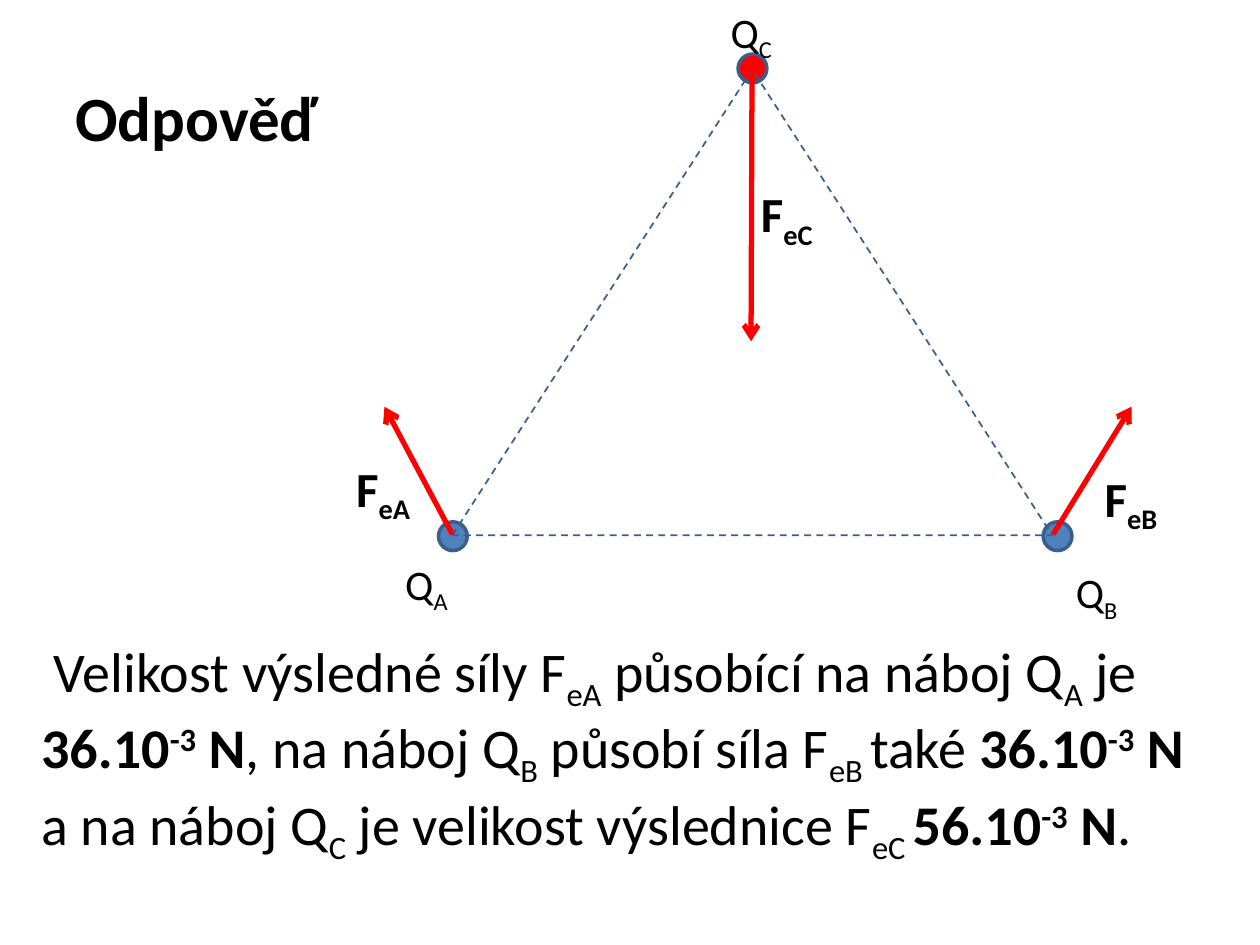
"""Build a slide with the resultant electric forces on three charges in a triangle."""
from typing import NamedTuple

from lxml import etree
from pptx import Presentation
from pptx.dml.color import RGBColor
from pptx.enum import dml, shapes, text
from pptx.oxml import ns
from pptx.util import Cm, Pt

BLACK = RGBColor(0x00, 0x00, 0x00)
RED = RGBColor(0xFF, 0x00, 0x00)
BLUE = RGBColor(0x4F, 0x81, 0xBD)
OUTLINE = RGBColor(0x3A, 0x5F, 0x8C)
FONT = "Calibri"
SUB, SUPER = -25, 30
CHARGE_SIZE = 0.58
LABEL_HEIGHT = 1.88


class Run(NamedTuple):
    words: str
    baseline: int = 0
    bold: bool = False


class Charge(NamedTuple):
    x: float
    y: float
    fill: RGBColor


class Force(NamedTuple):
    x: float
    y: float
    tip_x: float
    tip_y: float


class Label(NamedTuple):
    symbol: str
    index: str
    left: float
    top: float
    width: float
    size: int = 24
    bold: bool = False


CHARGES = [
    Charge(9.13, 10.81, BLUE),
    Charge(21.32, 10.81, BLUE),
    Charge(15.17, 1.38, RED),
]
FORCES = [
    Force(15.16, 1.4, 15.14, 6.88),
    Force(9.12, 10.77, 7.75, 8.2),
    Force(21.23, 10.77, 22.81, 8.2),
]
LABELS = [
    Label("Q", "A", 7.92, 11.13, 1.6),
    Label("Q", "B", 21.44, 11.3, 1.6),
    Label("Q", "C", 14.48, 0, 1.6),
    Label("F", "eC", 15.09, 3.58, 1.78, 28, True),
    Label("F", "eB", 22.02, 9.32, 2.08, 28, True),
    Label("F", "eA", 6.93, 9.12, 1.78, 28, True),
]


def newtons(mantissa: str) -> list[Run]:
    return [Run(f"{mantissa}.10", bold=True), Run("-3", SUPER, True), Run(" N", bold=True)]


ANSWER = [
    Run(" Velikost výsledné síly F"), Run("eA", SUB),
    Run(" působící na náboj Q"), Run("A", SUB), Run(" je "),
    *newtons("36"),
    Run(", na náboj Q"), Run("B", SUB),
    Run(" působí síla F"), Run("eB ", SUB), Run("také "),
    *newtons("36"),
    Run(" a na náboj Q"), Run("C", SUB),
    Run(" je velikost výslednice F"), Run("eC ", SUB),
    *newtons("56"), Run("."),
]


def add_text(slide, runs: list[Run], left: float, top: float, width: float, height: float,
             *, size: int, anchor=text.MSO_ANCHOR.TOP) -> None:
    frame = slide.shapes.add_textbox(Cm(left), Cm(top), Cm(width), Cm(height)).text_frame
    frame.word_wrap = True
    frame.vertical_anchor = anchor
    paragraph = frame.paragraphs[0]
    for part in runs:
        run = paragraph.add_run()
        run.text = part.words
        run.font.name = FONT
        run.font.size = Pt(size)
        run.font.bold = part.bold
        run.font.color.rgb = BLACK
        if part.baseline:
            run._r.get_or_add_rPr().set("baseline", str(part.baseline * 1000))


def add_charge(slide, charge: Charge) -> None:
    half = CHARGE_SIZE / 2
    dot = slide.shapes.add_shape(shapes.MSO_SHAPE.OVAL, Cm(charge.x - half), Cm(charge.y - half),
                                 Cm(CHARGE_SIZE), Cm(CHARGE_SIZE))
    dot.shadow.inherit = False
    dot.fill.solid()
    dot.fill.fore_color.rgb = charge.fill
    dot.line.color.rgb = OUTLINE
    dot.line.width = Pt(2)


def add_triangle(slide) -> None:
    triangle = slide.shapes.add_shape(shapes.MSO_SHAPE.ISOSCELES_TRIANGLE,
                                      Cm(9.12), Cm(1.4), Cm(12.09), Cm(9.39))
    triangle.shadow.inherit = False
    triangle.fill.background()
    triangle.line.color.rgb = OUTLINE
    triangle.line.width = Pt(1)
    triangle.line.dash_style = dml.MSO_LINE.DASH


def add_force(slide, force: Force) -> None:
    arrow = slide.shapes.add_connector(shapes.MSO_CONNECTOR.STRAIGHT, Cm(force.x), Cm(force.y),
                                       Cm(force.tip_x), Cm(force.tip_y))
    arrow.line.color.rgb = RED
    arrow.line.width = Pt(3)
    etree.SubElement(arrow.line._get_or_add_ln(), ns.qn("a:tailEnd"), type="arrow")
    etree.SubElement(arrow._element.spPr, ns.qn("a:effectLst"))


def main() -> None:
    deck = Presentation()
    deck.slide_width, deck.slide_height = Cm(25.4), Cm(19.05)
    slide = deck.slides.add_slide(deck.slide_layouts[6])
    for charge in CHARGES:
        add_charge(slide, charge)
    add_text(slide, ANSWER, 0.58, 12.7, 24, 5.51, size=32)
    add_text(slide, [Run("Odpověď", bold=True)], 1.27, 0.76, 22.86, 3.18,
             size=36, anchor=text.MSO_ANCHOR.MIDDLE)
    add_triangle(slide)
    for force in FORCES:
        add_force(slide, force)
    for label in LABELS:
        add_text(slide, [Run(label.symbol, bold=label.bold), Run(label.index, SUB, label.bold)],
                 label.left, label.top, label.width, LABEL_HEIGHT, size=label.size)
    deck.save("out.pptx")


if __name__ == "__main__":
    main()
